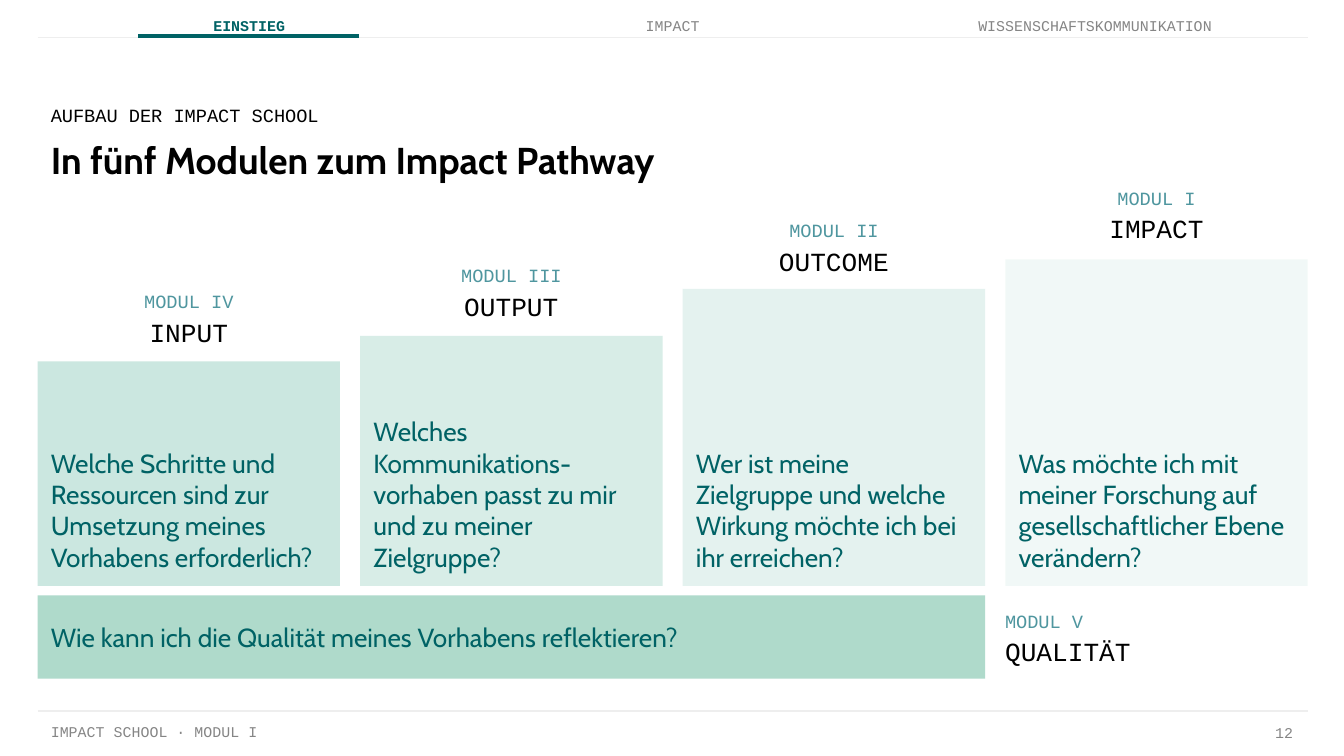
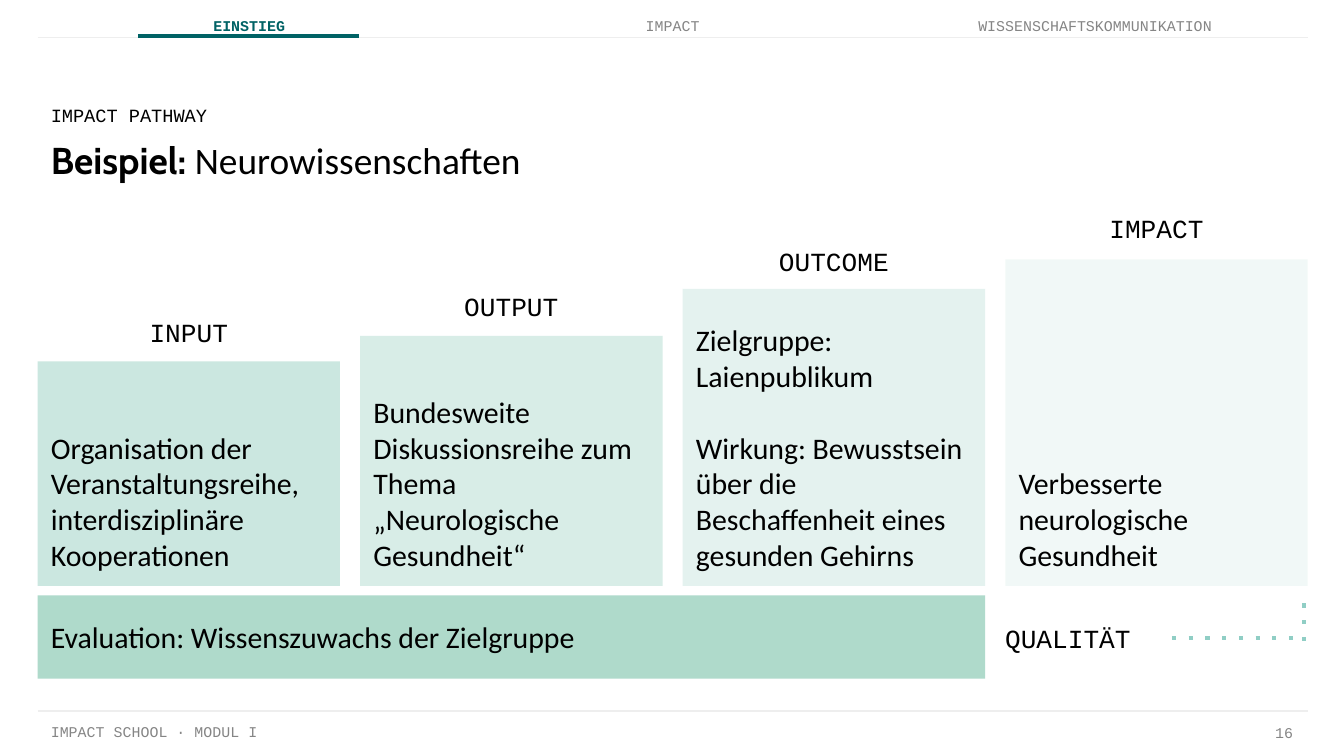
"""Builds two slides on the modules and an example of an impact pathway."""
from lxml import etree
from pptx import Presentation
from pptx.dml.color import RGBColor
from pptx.enum.shapes import MSO_CONNECTOR, MSO_SHAPE
from pptx.enum.text import MSO_ANCHOR, PP_ALIGN
from pptx.oxml.ns import qn
from pptx.util import Inches, Pt

LEFT, CENTER, RIGHT = PP_ALIGN.LEFT, PP_ALIGN.CENTER, PP_ALIGN.RIGHT
TOP, MIDDLE, BOTTOM = MSO_ANCHOR.TOP, MSO_ANCHOR.MIDDLE, MSO_ANCHOR.BOTTOM
RECT, STRAIGHT = MSO_SHAPE.RECTANGLE, MSO_CONNECTOR.STRAIGHT

BLACK = RGBColor(0x00, 0x00, 0x00)
WHITE = RGBColor(0xFF, 0xFF, 0xFF)
GRAY = RGBColor(0x85, 0x85, 0x85)
RULE = RGBColor(0xEE, 0xEE, 0xEE)
TEAL = RGBColor(0x00, 0x62, 0x65)
STEEL = RGBColor(0x4F, 0x96, 0x9F)
MINT = RGBColor(0xCB, 0xE7, 0xE0)
GREEN = RGBColor(0xAF, 0xDA, 0xCB)
AQUA = RGBColor(0x90, 0xCE, 0xC5)

MONO, CABIN, PLAIN = "Courier New", "Cabin", "Calibri"
EDGE, END = 0.28, 9.73
STEP, WIDE, BASE = 2.4, 2.25, 4.36

TABS = [("EINSTIEG", 0.98, 1.75), ("IMPACT", 3.3, 3.41),
        ("WISSENSCHAFTSKOMMUNIKATION", 6.72, 2.86)]
STAIRS = [("INPUT", 2.69, 2.33, 1.65, 100), ("OUTPUT", 2.5, 2.14, 1.65, 75),
          ("OUTCOME", 2.15, 1.8, 1.44, 50), ("IMPACT", 1.93, 1.56, 1.77, 25)]


def write(frame, paras, font=MONO, size=14, color=BLACK, bold=False,
          align=LEFT, anchor=MIDDLE, gap=0, lead=None):
    """Fill a frame with paragraphs, each a string or a list of (text, font, bold)."""
    frame.word_wrap = True
    frame.vertical_anchor = anchor
    frame.margin_left = frame.margin_right = Inches(0.1)
    frame.margin_top = frame.margin_bottom = Inches(0.1)
    for i, para in enumerate([paras] if isinstance(paras, str) else paras):
        p = frame.add_paragraph() if i else frame.paragraphs[0]
        p.alignment = align
        if lead:
            p.line_spacing = lead
        if i and gap:
            p.space_before = Pt(gap)
        parts = [(para, font, bold)] if isinstance(para, str) else para
        for words, face, heavy in parts:
            for j, line in enumerate(words.split("\v")):
                if j:
                    p.add_line_break()
                run = p.add_run()
                run.text = line
                run.font.name = face
                run.font.size = Pt(size)
                run.font.bold = heavy
                run.font.color.rgb = color


class Deck:
    """Holds the shared style and the current slide."""

    def __init__(self):
        """Start an empty deck."""
        self.prs = Presentation()
        self.prs.slide_width = Inches(10)
        self.prs.slide_height = Inches(10 * 9 / 16)
        self.slide = None

    def text(self, paras, x, y, w, h, **style):
        """Add a text box."""
        box = self.slide.shapes.add_textbox(Inches(x), Inches(y), Inches(w), Inches(h))
        write(box.text_frame, paras, **style)

    def block(self, paras, x, y, w, h, fill, alpha=100, **style):
        """Add a filled rectangle with text."""
        box = self.slide.shapes.add_shape(
            RECT, Inches(x), Inches(y), Inches(w), Inches(h))
        box.shadow.inherit = False
        box.fill.solid()
        box.fill.fore_color.rgb = fill
        box.line.fill.background()
        if alpha < 100:
            tint = box.element.spPr.find(qn("a:solidFill"))[0]
            etree.SubElement(tint, qn("a:alpha"), val=str(alpha * 1000))
        write(box.text_frame, paras, **style)

    def line(self, x1, y1, x2, y2, color, width, dots=False):
        """Add a straight line."""
        line = self.slide.shapes.add_connector(
            STRAIGHT, Inches(x1), Inches(y1), Inches(x2), Inches(y2))
        line.line.color.rgb = color
        line.line.width = Pt(width)
        props = line.element.spPr
        if dots:
            etree.SubElement(props.find(qn("a:ln")), qn("a:prstDash"), val="dot")
        etree.SubElement(props, qn("a:effectLst"))

    def page(self, num, kicker, title):
        """Start a slide with tabs, title and footer."""
        self.slide = self.prs.slides.add_slide(self.prs.slide_layouts[6])
        small = dict(size=8, color=GRAY)
        self.text("IMPACT SCHOOL · MODUL I", EDGE, 5.31, 6.3, 0.34, anchor=TOP, **small)
        self.text(num, 9.29, 5.29, 0.43, 0.34, align=RIGHT, lead=0.8, **small)
        for y in (5.29, 0.28):
            self.line(EDGE, y, END, y, RULE, 0.75)
        for i, (name, x, w) in enumerate(TABS):
            self.text(name, x, 0.02, w, 0.34, size=8, align=CENTER,
                      color=GRAY if i else TEAL, bold=not i)
        self.line(1.03, 0.27, 2.67, 0.27, TEAL, 2.25)
        self.text(kicker, EDGE, 0.76, 7.77, 0.2, size=10)
        self.text(title, EDGE, 0.92, 7.77, 0.52, font=CABIN, size=20, bold=True, anchor=TOP)

    def stairs(self, texts, base, mark, gaps=(0, 0, 0, 0), **style):
        """Add the rising columns with headings and the quality bar."""
        for i, (name, y, head, w, alpha) in enumerate(STAIRS):
            x = EDGE + STEP * i
            self.block(texts[i], x, y, WIDE, BASE - y, MINT, alpha,
                       anchor=BOTTOM, gap=gaps[i], **style)
            self.text(name, x + (WIDE - w) / 2, head, w, 0.28, align=CENTER)
        self.block(base, EDGE, 4.43, 7.05, 0.62, GREEN, **style)
        self.block("QUALITÄT", 7.38, mark, 1.22, 0.37, WHITE, anchor=TOP)

    def labels(self, names):
        """Add the module names above the headings."""
        small = dict(size=10, color=STEEL)
        for i, (_, _, head, w, _) in enumerate(STAIRS):
            x = EDGE + STEP * i + (WIDE - w) / 2
            self.text(names[i], x, head - 0.23, w, 0.28, align=CENTER, **small)
        self.text(names[-1], 7.38, 4.48, 1, 0.28, **small)


def main():
    """Build and save both slides."""
    deck = Deck()
    deck.page("12", "AUFBAU DER IMPACT SCHOOL", "In fünf Modulen zum Impact Pathway")
    deck.stairs(
        ["Welche Schritte und Ressourcen sind zur Umsetzung meines Vorhabens erforderlich?",
         "Welches Kommunikations-\vvorhaben passt zu mir und zu meiner Zielgruppe?",
         "Wer ist meine Zielgruppe und welche Wirkung möchte ich bei ihr erreichen?",
         "Was möchte ich mit meiner Forschung auf gesellschaftlicher Ebene verändern?"],
        "Wie kann ich die Qualität meines Vorhabens reflektieren?",
        4.63, font=CABIN, color=TEAL)
    deck.labels(["MODUL IV", "MODUL III", "MODUL II", "MODUL I", "MODUL V"])

    deck.page("16", "IMPACT PATHWAY",
              [[("Beispiel: ", CABIN, True), ("Neurowissenschaften", PLAIN, False)]])
    deck.stairs(
        ["Organisation der Veranstaltungsreihe, interdisziplinäre Kooperationen",
         ["Bundesweite Diskussionsreihe zum Thema", "„Neurologische Gesundheit“"],
         ["Zielgruppe: Laienpublikum",
          "Wirkung: Bewusstsein über die Beschaffenheit eines gesunden Gehirns"],
         "Verbesserte neurologische Gesundheit"],
        "Evaluation: Wissenszuwachs der Zielgruppe",
        4.53, gaps=(0, 0, 19.2, 0), font=PLAIN, size=16)
    deck.line(8.72, 4.75, 9.65, 4.75, AQUA, 2.25, dots=True)
    deck.line(9.7, 4.49, 9.7, 4.78, AQUA, 2.25, dots=True)
    deck.prs.save("out.pptx")


if __name__ == "__main__":
    main()
